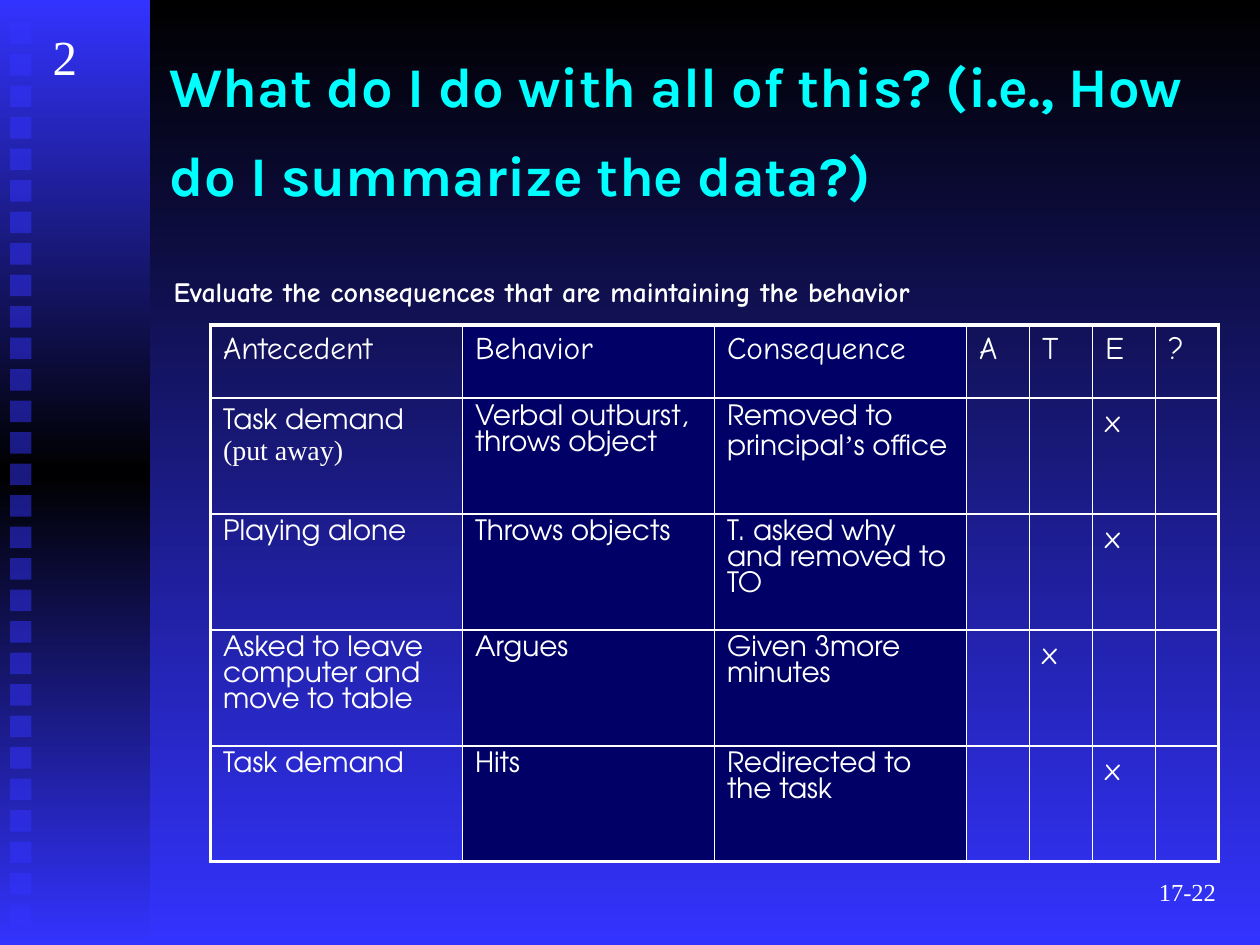
from copy import deepcopy
from dataclasses import dataclass

from lxml.etree import SubElement
from pptx import Presentation
from pptx.dml.color import RGBColor
from pptx.enum.shapes import MSO_SHAPE as Shape
from pptx.enum.text import MSO_ANCHOR as Anchor, MSO_AUTO_SIZE as AutoSize, PP_ALIGN as Align
from pptx.oxml.ns import qn
from pptx.util import Inches, Pt


@dataclass(frozen=True)
class Theme:
    black: str = "000000"
    blue: str = "3333FF"
    navy: str = "000066"
    cyan: str = "00FFFF"
    white: str = "FFFFFF"
    heading: str = "Karla"
    casual: str = "Comic Neue"
    body: str = "TeX Gyre Adventor"
    serif: str = "Times New Roman"
    title_size: int = 32
    title_end_size: int = 44
    number_size: int = 28
    label_size: int = 18
    body_size: int = 16
    footer_size: int = 14
    outer_line: float = 2.25
    inner_line: float = 1


THEME = Theme()

TITLE = "What do I do with all of this? (i.e., How do I summarize the data?)"
SUBTITLE = "Evaluate the consequences that are maintaining the behavior"
PAGE_NUMBER = "2"
FOOTER = "17-22"
HEADERS = ["Antecedent", "Behavior", "Consequence", "A", "T", "E", "?"]
EVENTS = [
    (["Task demand", " (put away)"], ["Verbal outburst, throws object"],
     ["Removed to principal", "’", "s office"], "E"),
    (["Playing alone"], ["Throws objects"], ["T. asked why and removed to TO"], "E"),
    (["Asked to leave computer and move to table"], ["Argues"], ["Given 3more minutes"], "T"),
    (["Task demand"], ["Hits"], ["Redirected to the task"], "E"),
]
COLUMN_WIDTHS = [2, 2, 2, 0.5, 0.5, 0.5, 0.5]
ROW_HEIGHTS = [0.58] + [0.92] * len(EVENTS)
NAVY_COLUMNS = (1, 2)
SQUARE_COUNT = 29


def rgb(color):
    return RGBColor.from_string(color)


def add_span(para, text, font, size, color=THEME.white, bold=False):
    span = para.add_run()
    span.text = text
    span.font.name = font
    span.font.size = Pt(size)
    span.font.bold = bold
    span.font.color.rgb = rgb(color)


def add_box(page, left, top, width, height, anchor=Anchor.TOP, wrap=True):
    box = page.shapes.add_textbox(Inches(left), Inches(top), Inches(width), Inches(height))
    box.text_frame.word_wrap = wrap
    box.text_frame.vertical_anchor = anchor
    return box.text_frame


def color_stops(fill, colors):
    fill.gradient_angle = 270
    for index, (stop, color) in enumerate(zip(fill.gradient_stops, colors)):
        stop.position = index / (len(colors) - 1)
        stop.color.rgb = rgb(color)


def add_rectangle(page, left, top, width, height):
    shape = page.shapes.add_shape(
        Shape.RECTANGLE, Inches(left), Inches(top), Inches(width), Inches(height))
    shape.shadow.inherit = False
    shape.line.fill.background()
    return shape


def add_background(page):
    page.background.fill.gradient()
    color_stops(page.background.fill, [THEME.black, THEME.blue])

    panel = add_rectangle(page, 0, 0, 1.19, 7.5)
    panel.fill.gradient()
    stops = next(panel.element.iter(qn("a:gsLst")))
    stops.append(deepcopy(stops[0]))
    color_stops(panel.fill, [THEME.blue, THEME.black, THEME.blue])

    for index in range(SQUARE_COUNT):
        square = add_rectangle(page, 0.08, 0.18 + 0.25 * index, 0.17, 0.17)
        square.fill.solid()
        square.fill.fore_color.rgb = rgb(THEME.blue)
        tint = next(square.element.spPr.iter(qn("a:srgbClr")))
        SubElement(tint, qn("a:alpha"), val="50000")


def set_borders(cell, row, column, last_row, last_column):
    properties = cell._tc.get_or_add_tcPr()
    edges = [("a:lnL", column == 0), ("a:lnR", column == last_column),
             ("a:lnT", row == 0), ("a:lnB", row == last_row)]
    for tag, outer in edges:
        width = THEME.outer_line if outer else THEME.inner_line
        line = SubElement(properties, qn(tag), w=str(Pt(width)))
        SubElement(SubElement(line, qn("a:solidFill")), qn("a:srgbClr"), val=THEME.white)


def add_event_table(page):
    rows = [[[label] for label in HEADERS]]
    for antecedent, behavior, consequence, mark in EVENTS:
        marks = [["x"] if label == mark else [] for label in HEADERS[3:]]
        rows.append([antecedent, behavior, consequence] + marks)

    table = page.shapes.add_table(
        len(rows), len(HEADERS), Inches(1.67), Inches(2.58),
        Inches(sum(COLUMN_WIDTHS)), Inches(sum(ROW_HEIGHTS))).table
    table.first_row = table.horz_banding = False
    for column, width in zip(table.columns, COLUMN_WIDTHS):
        column.width = Inches(width)
    for row, height in zip(table.rows, ROW_HEIGHTS):
        row.height = Inches(height)

    for r, row in enumerate(rows):
        for c, pieces in enumerate(row):
            cell = table.cell(r, c)
            set_borders(cell, r, c, len(rows) - 1, len(HEADERS) - 1)
            if c in NAVY_COLUMNS:
                cell.fill.solid()
                cell.fill.fore_color.rgb = rgb(THEME.navy)
            else:
                cell.fill.background()
            casual = r == 0 or c >= 3
            size = THEME.label_size if casual else THEME.body_size
            para = cell.text_frame.paragraphs[0]
            para.space_before = Pt(0.2 * size)
            for index, piece in enumerate(pieces):
                main_font = THEME.casual if casual else THEME.body
                add_span(para, piece, THEME.serif if index % 2 else main_font, size)


def main():
    deck = Presentation()
    deck.slide_width, deck.slide_height = Inches(10), Inches(7.5)
    page = deck.slides.add_slide(deck.slide_layouts[6])
    add_background(page)

    title = add_box(page, 1.25, 0.42, 8.5, 1.25, Anchor.MIDDLE).paragraphs[0]
    add_span(title, TITLE, THEME.heading, THEME.title_size, THEME.cyan, True)
    add_span(title, " ", THEME.serif, THEME.title_end_size, THEME.cyan)

    subtitle = add_box(page, 1.28, 2.13, 8.5, 0.4).paragraphs[0]
    subtitle.space_before = Pt(0.2 * THEME.body_size)
    add_span(subtitle, SUBTITLE, THEME.casual, THEME.body_size, bold=True)

    add_event_table(page)

    number = add_box(page, 0.32, 0.16, 0.4, 0.57, wrap=False)
    number.auto_size = AutoSize.SHAPE_TO_FIT_TEXT
    add_span(number.paragraphs[0], PAGE_NUMBER, THEME.serif, THEME.number_size)

    footer = add_box(page, 7.67, 6.83, 2.08, 0.5, Anchor.MIDDLE).paragraphs[0]
    footer.alignment = Align.RIGHT
    add_span(footer, FOOTER, THEME.serif, THEME.footer_size)

    deck.save("out.pptx")


if __name__ == "__main__":
    main()
